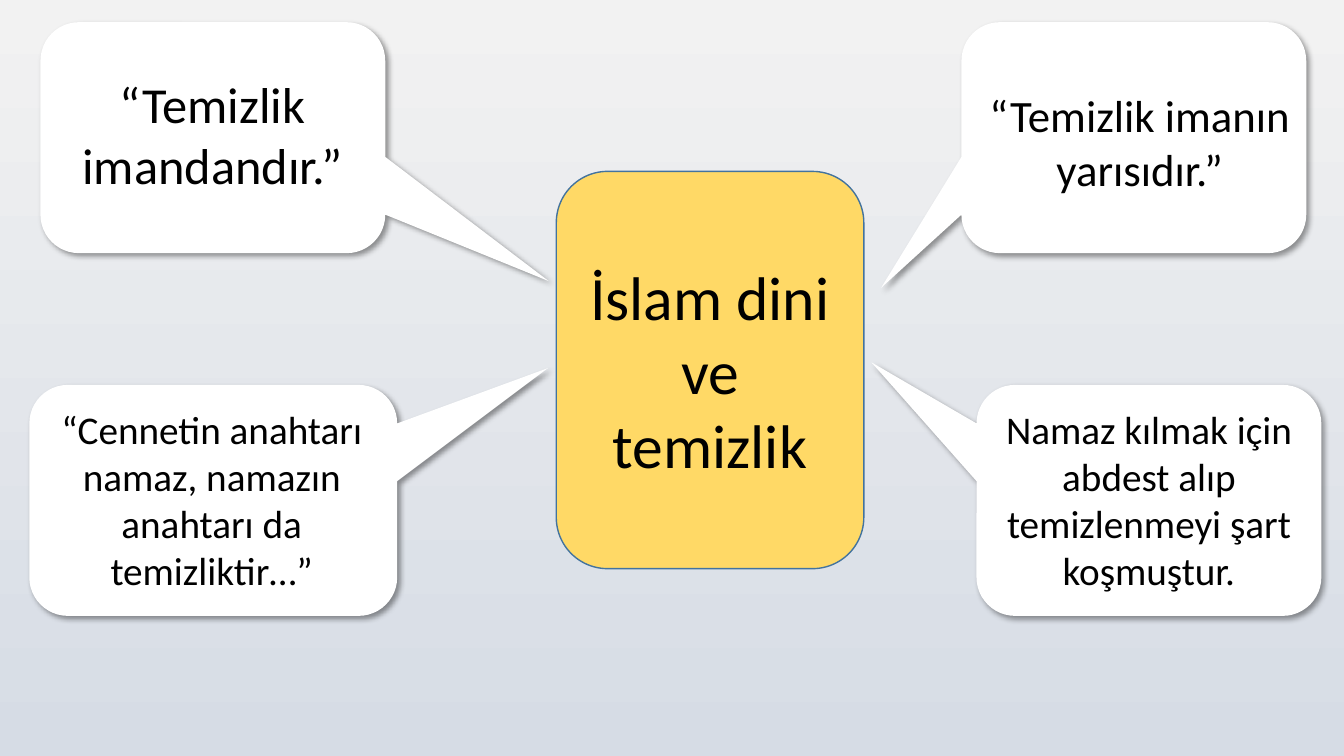
import dataclasses

import lxml.etree
import pptx
import pptx.dml.color
import pptx.enum.shapes
import pptx.enum.text
import pptx.oxml.ns
import pptx.util

Cm = pptx.util.Cm
Shapes = pptx.enum.shapes.MSO_SHAPE


@dataclasses.dataclass(frozen=True)
class Theme:
    font: str = "Calibri"
    ink: str = "000000"
    bubble: str = "FFFFFF"
    center: str = "FFD966"
    outline: str = "43739E"
    backdrop: tuple = ("F2F2F2", "D6DCE5")
    title: int = 44
    large: int = 36
    medium: int = 32
    small: int = 28


def rgb(code):
    return pptx.dml.color.RGBColor.from_string(code)


def apply(target, formats):
    for name, value in formats.items():
        setattr(target, name, value)


class Board:
    def __init__(self, page, theme):
        self.page = page
        self.theme = theme

    def backdrop(self):
        fill = self.page.background.fill
        fill.gradient()
        fill.gradient_angle = 270
        for stop, code in zip(fill.gradient_stops, self.theme.backdrop):
            stop.color.rgb = rgb(code)

    def panel(self, kind, place, color):
        box = self.page.shapes.add_shape(kind, *map(Cm, place))
        box.shadow.inherit = False
        box.fill.solid()
        box.fill.fore_color.rgb = rgb(color)
        return box

    def bubble(self, place, tip):
        box = self.panel(Shapes.ROUNDED_RECTANGULAR_CALLOUT, place, self.theme.bubble)
        box.line.fill.background()
        for index, value in enumerate((*tip, 0.167)):
            box.adjustments[index] = value
        self.cast_shadow(box)

    def cast_shadow(self, box):
        tag = pptx.oxml.ns.qn
        effects = box._element.spPr.find(tag("a:effectLst"))
        shadow = lxml.etree.SubElement(
            effects, tag("a:outerShdw"), blurRad="50800", dist="38100",
            dir="2700000", algn="tl", rotWithShape="0")
        color = lxml.etree.SubElement(shadow, tag("a:srgbClr"), val=self.theme.ink)
        lxml.etree.SubElement(color, tag("a:alpha"), val="40000")

    def center(self, place, words):
        box = self.panel(Shapes.ROUNDED_RECTANGLE, place, self.theme.center)
        box.line.color.rgb = rgb(self.theme.outline)
        box.line.width = pptx.util.Pt(1)
        self.fill_text(box, words, self.theme.title, pptx.enum.text.MSO_ANCHOR.MIDDLE)

    def text(self, place, words, size):
        box = self.page.shapes.add_textbox(*map(Cm, place))
        self.fill_text(box, words, size, pptx.enum.text.MSO_ANCHOR.TOP)
        box.text_frame.auto_size = pptx.enum.text.MSO_AUTO_SIZE.SHAPE_TO_FIT_TEXT

    def fill_text(self, box, words, size, anchor):
        apply(box.text_frame, {"word_wrap": True, "vertical_anchor": anchor})
        para = box.text_frame.paragraphs[0]
        para.alignment = pptx.enum.text.PP_ALIGN.CENTER
        span = para.add_run()
        span.text = words
        apply(span.font, {"name": self.theme.font, "size": pptx.util.Pt(size)})
        span.font.color.rgb = rgb(self.theme.ink)


def main():
    deck = pptx.Presentation()
    apply(deck, {"slide_width": Cm(33.87), "slide_height": Cm(19.05)})
    theme = Theme()
    board = Board(deck.slides.add_slide(deck.slide_layouts[6]), theme)
    board.backdrop()

    upper, lower, width, height = 0.56, 9.7, 8.69, 5.82
    bubbles = [
        ((1.02, upper, width, height), (0.974, 0.621)),
        ((0.74, lower, 9.27, height), (0.91, -0.573)),
        ((24.23, upper, width, height), (-0.733, 0.65)),
        ((24.61, lower, width, height), (-0.805, -0.598)),
    ]
    for place, tip in bubbles:
        board.bubble(place, tip)

    board.center((14.02, 4.32, 7.75, 10.01), "İslam dini ve temizlik")

    sayings = [
        ((1.57, 1.73, 7.57, 3.33), "“Temizlik imandandır.”", theme.large),
        ((24.61, 2.08, 8.23, 3), "“Temizlik imanın yarısıdır.”", theme.medium),
        ((24.61, 10.08, width, 5.05),
         "Namaz kılmak için abdest alıp temizlenmeyi şart koşmuştur.", theme.small),
        ((0.99, 10.08, width, 5.05),
         "“Cennetin anahtarı namaz, namazın anahtarı da temizliktir…”", theme.small),
    ]
    for place, words, size in sayings:
        board.text(place, words, size)

    deck.save("out.pptx")


if __name__ == "__main__":
    main()
